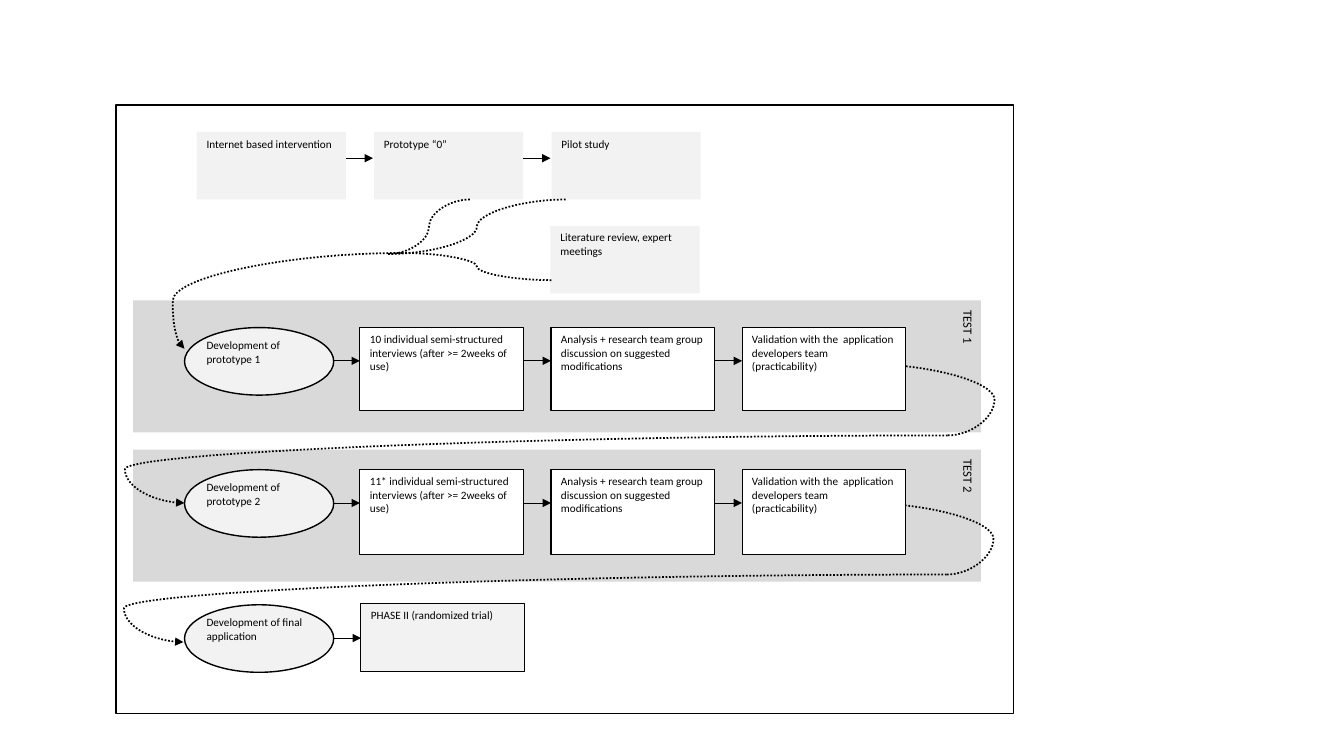
from dataclasses import dataclass

from lxml import etree
from pptx import Presentation
from pptx.dml.color import RGBColor
from pptx.enum import dml, shapes, text
from pptx.oxml import ns
from pptx.util import Inches, Pt


@dataclass(frozen=True)
class Theme:
    font: str = "Calibri"
    ink: str = "000000"
    white: str = "FFFFFF"
    pale: str = "F2F2F2"
    band: str = "D9D9D9"
    body: float = 8
    label: float = 9
    thin: float = 0.5
    edge: float = 0.75
    outline: float = 1
    dotted: float = 1.25


@dataclass(frozen=True)
class Box:
    left: float
    top: float
    width: float
    height: float

    def inches(self):
        return [Inches(n) for n in (self.left, self.top, self.width, self.height)]

    def inner(self, dx, dy, width, height):
        return Box(self.left + dx, self.top + dy, width, height)


THEME = Theme()
RECT = shapes.MSO_SHAPE.RECTANGLE
OVAL = shapes.MSO_SHAPE.OVAL


def write(shape, words, size=THEME.body):
    frame = shape.text_frame
    frame.word_wrap = True
    frame.vertical_anchor = text.MSO_ANCHOR.TOP
    para = frame.paragraphs[0]
    para.alignment = text.PP_ALIGN.LEFT
    span = para.add_run()
    span.text = words
    span.font.name = THEME.font
    span.font.size = Pt(size)
    span.font.color.rgb = RGBColor.from_string(THEME.ink)


def add_block(page, box, words="", fill=None, line=None, kind=RECT, size=THEME.body):
    shape = page.shapes.add_shape(kind, *box.inches())
    shape.shadow.inherit = False
    if fill:
        shape.fill.solid()
        shape.fill.fore_color.rgb = RGBColor.from_string(fill)
    else:
        shape.fill.background()
    if line:
        shape.line.color.rgb = RGBColor.from_string(THEME.ink)
        shape.line.width = Pt(line)
    else:
        shape.line.fill.background()
    if words:
        write(shape, words, size)
    return shape


def add_link(page, start, end, width=THEME.thin, bend=None, arrow=True):
    """Straight solid line, or a dotted curve when bend is given."""
    kind = shapes.MSO_CONNECTOR.STRAIGHT if bend is None else shapes.MSO_CONNECTOR.CURVE
    link = page.shapes.add_connector(kind, *[Inches(n) for n in (*start, *end)])
    link.line.color.rgb = RGBColor.from_string(THEME.ink)
    link.line.width = Pt(width)
    props = link._element.spPr
    if bend is not None:
        link.line.dash_style = dml.MSO_LINE.ROUND_DOT
        guides = props.find(ns.qn("a:prstGeom")).get_or_add_avLst()
        etree.SubElement(guides, ns.qn("a:gd"), name="adj1", fmla=f"val {round(bend * 100000)}")
    if arrow:
        etree.SubElement(link.line._get_or_add_ln(), ns.qn("a:tailEnd"), type="triangle")
    etree.SubElement(props, ns.qn("a:effectLst"))


def add_curve(page, start, end, bend=0.5, arrow=False):
    add_link(page, start, end, THEME.dotted, bend, arrow)


def add_arrow(page, left, y):
    add_link(page, (left, y), (left + 0.27, y))


def add_band(page, box, label):
    band = add_block(page, box, label, THEME.band, size=THEME.label)
    band.text_frame._txBody.bodyPr.set("vert", "vert")


def add_development(page, box, words):
    add_block(page, box, fill=THEME.pale, line=THEME.outline, kind=OVAL)
    caption = page.shapes.add_textbox(*box.inner(0.12, 0.06, 1.35, 0.54).inches())
    write(caption, words)


def add_loop(page, left, top):
    """Dotted return from a validation step to the next development."""
    turn = (left + 0.83, top + 0.71)
    add_curve(page, turn, (left - 6.74, top + 1.38), 1.078, arrow=True)
    add_curve(page, (left, top), turn, 1.559)


def add_preparation(page, box):
    pitch = 1.76
    topics = ["Internet based intervention", "Prototype “0”", "Pilot study"]
    for i, words in enumerate(topics):
        add_block(page, box.inner(i * pitch, 0, 1.48, 0.67), words, THEME.pale)
        if i:
            add_arrow(page, box.left + i * pitch - 0.28, box.top + 0.26)
    add_block(page, box.inner(3.51, 0.93, 1.48, 0.67),
              "Literature review, expert meetings", THEME.pale)

    # Inputs merging into the first development
    bottom = box.top + 0.67
    merge = (box.left + 1.9, box.top + 1.21)
    join = (box.left + 2.04, box.top + 1.2)
    add_curve(page, join, (box.left - 0.12, box.top + 2.15), 1.054, arrow=True)
    for dx in (2.71, 3.66):
        add_curve(page, (box.left + dx, bottom), merge)
    add_curve(page, (box.left + 3.52, box.top + 1.47), join)


def add_test(page, box, development, steps):
    add_development(page, box.inner(0, 0, 1.48, 0.67), development)
    for i, words in enumerate(steps):
        step = box.inner(1.74 + i * 1.895, 0, 1.62, box.height)
        add_block(page, step, words, THEME.white, THEME.edge)
        add_arrow(page, step.left - 0.27, box.top + 0.33)


def add_final(page, box):
    add_block(page, box.inner(1.75, -0.01, 1.62, 0.67),
              "PHASE II (randomized trial)", THEME.pale, THEME.edge)
    add_development(page, box, "Development of final application")
    add_arrow(page, box.left + 1.48, box.top + 0.33)


def main():
    deck = Presentation()
    deck.slide_width, deck.slide_height = Inches(13.33), Inches(7.5)
    page = deck.slides.add_slide(deck.slide_layouts[6])

    # Frame and test bands
    add_block(page, Box(1.15, 1.04, 8.9, 6.04), line=THEME.outline)
    for i in range(2):
        add_band(page, Box(1.32, 2.98 + i * 1.48, 8.41, 1.31), f"TEST {i + 1}")

    # Returns between rounds
    for i in range(2):
        add_loop(page, 8.57 - i * 0.01, 3.61 + i * 1.38)

    # Test rounds
    rounds = [(3.25, 0.82, "10"), (4.66, 0.84, "11*")]
    for i, (top, height, count) in enumerate(rounds, 1):
        add_test(page, Box(1.83, top, 7.15, height), f"Development of prototype {i}", [
            f"{count} individual semi-structured interviews (after >= 2weeks of use)",
            "Analysis + research team group discussion on suggested modifications",
            "Validation with the  application developers team (practicability)",
        ])

    # Preparation and final phase
    add_preparation(page, Box(1.95, 1.31, 5, 1.6))
    add_final(page, Box(1.83, 6, 1.48, 0.67))
    deck.save("out.pptx")


if __name__ == "__main__":
    main()
